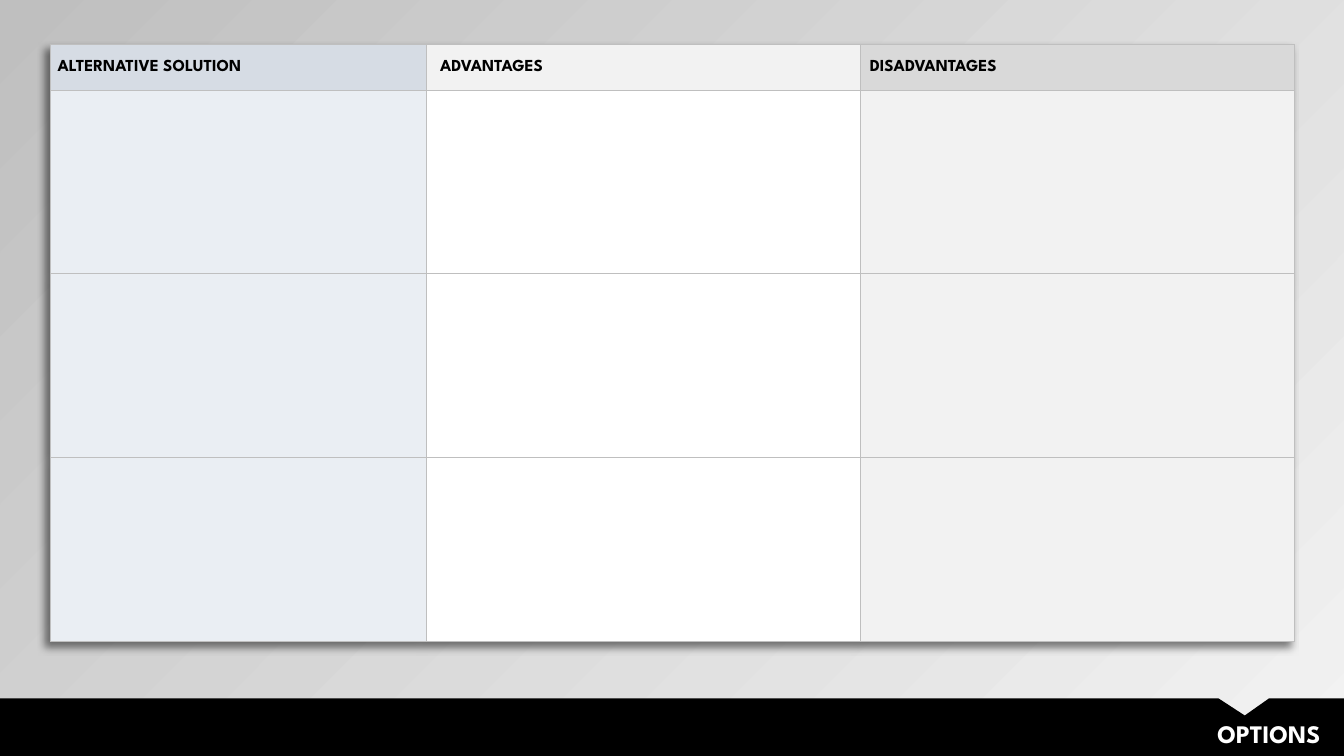
import pptx
import pptx.dml.color
import pptx.enum.text
import pptx.oxml
import pptx.oxml.ns
import pptx.util
from dataclasses import dataclass

Cm = pptx.util.Cm
NS = pptx.oxml.ns.nsdecls("a")


@dataclass(frozen=True)
class Theme:
    font: str = "League Spartan"
    header_size: int = 12
    title_size: int = 18
    black: str = "000000"
    white: str = "FFFFFF"
    grid: str = "BFBFBF"
    light: str = "F2F2F2"
    header_fills: tuple = ("D6DCE4", "F2F2F2", "D9D9D9")
    body_fills: tuple = ("EAEEF3", "FFFFFF", "F2F2F2")


THEME = Theme()
WIDTH, HEIGHT = 33.87, 19.05
HEADERS = ("ALTERNATIVE SOLUTION", "ADVANTAGES", "DISADVANTAGES")
INSETS = (0.18, 0.34, 0.23)
COLUMN_WIDTHS = (9.48, 10.94, 10.94)
ROW_HEIGHTS = (1.15, 4.63, 4.63, 4.63)


def rgb(value):
    return pptx.dml.color.RGBColor.from_string(value)


def set_background(s):
    fill = s.background.fill
    fill.gradient()
    fill.gradient_angle = 135
    for stop, color in zip(fill.gradient_stops, (THEME.light, THEME.grid)):
        stop.color.rgb = rgb(color)


def set_font(p, size, color):
    p.font.name = THEME.font
    p.font.size = pptx.util.Pt(size)
    p.font.bold = True
    p.font.color.rgb = rgb(color)


def set_borders(cell):
    tcPr = cell._tc.get_or_add_tcPr()
    for i, side in enumerate(("lnL", "lnR", "lnT", "lnB")):
        tcPr.insert(i, pptx.oxml.parse_xml(
            f'<a:{side} {NS} w="6350"><a:solidFill>'
            f'<a:srgbClr val="{THEME.grid}"/></a:solidFill></a:{side}>'))


def add_table_shadow(table):
    table._tbl.tblPr.insert(0, pptx.oxml.parse_xml(
        f'<a:effectLst {NS}><a:outerShdw blurRad="76200" dist="63500" '
        'dir="8100000" algn="tr" rotWithShape="0"><a:srgbClr val="000000">'
        '<a:alpha val="50000"/></a:srgbClr></a:outerShdw></a:effectLst>'))


def fill_cell(cell, color):
    cell.fill.solid()
    cell.fill.fore_color.rgb = rgb(color)
    set_borders(cell)


def write_header(cell, text, inset):
    cell.vertical_anchor = pptx.enum.text.MSO_ANCHOR.MIDDLE
    cell.margin_left = Cm(inset)
    cell.margin_right = cell.margin_top = cell.margin_bottom = 0
    p = cell.text_frame.paragraphs[0]
    p.text = text
    set_font(p, THEME.header_size, THEME.black)


def add_options_table(s):
    table = s.shapes.add_table(
        len(ROW_HEIGHTS), len(COLUMN_WIDTHS), Cm(1.27), Cm(1.12),
        Cm(sum(COLUMN_WIDTHS)), Cm(sum(ROW_HEIGHTS))).table
    table.first_row = table.horz_banding = False
    for column, width in zip(table.columns, COLUMN_WIDTHS):
        column.width = Cm(width)
    for i, (row, height) in enumerate(zip(table.rows, ROW_HEIGHTS)):
        row.height = Cm(height)
        fills = THEME.body_fills if i else THEME.header_fills
        for cell, color in zip(row.cells, fills):
            fill_cell(cell, color)
    for cell, text, inset in zip(table.rows[0].cells, HEADERS, INSETS):
        write_header(cell, text, inset)
    add_table_shadow(table)


def add_footer_band(s):
    top = 17.6
    points = [(0, top), (30.71, top), (31.37, 18.03), (31.98, top),
              (WIDTH, top), (WIDTH, HEIGHT), (0, HEIGHT)]
    corners = [(Cm(x), Cm(y)) for x, y in points]
    builder = s.shapes.build_freeform(*corners[0])
    builder.add_line_segments(corners[1:], close=True)
    band = builder.convert_to_shape()
    band.shadow.inherit = False
    band.fill.solid()
    band.fill.fore_color.rgb = rgb(THEME.black)
    band.line.fill.background()


def place_title(s, text):
    title = s.shapes.title
    title.left, title.top = Cm(10.52), Cm(17.98)
    title.width, title.height = Cm(23.01), Cm(1.02)
    tf = title.text_frame
    tf.word_wrap = True
    tf.auto_size = pptx.enum.text.MSO_AUTO_SIZE.NONE
    tf.vertical_anchor = pptx.enum.text.MSO_ANCHOR.TOP
    p = tf.paragraphs[0]
    p.text = text
    p.alignment = pptx.enum.text.PP_ALIGN.RIGHT
    set_font(p, THEME.title_size, THEME.white)
    s.shapes._spTree.append(title._element)


def main():
    prs = pptx.Presentation()
    prs.slide_width, prs.slide_height = Cm(WIDTH), Cm(HEIGHT)
    s = prs.slides.add_slide(prs.slide_layouts.get_by_name("Title Only"))
    set_background(s)
    add_options_table(s)
    add_footer_band(s)
    place_title(s, "OPTIONS")
    prs.save("out.pptx")


if __name__ == "__main__":
    main()
